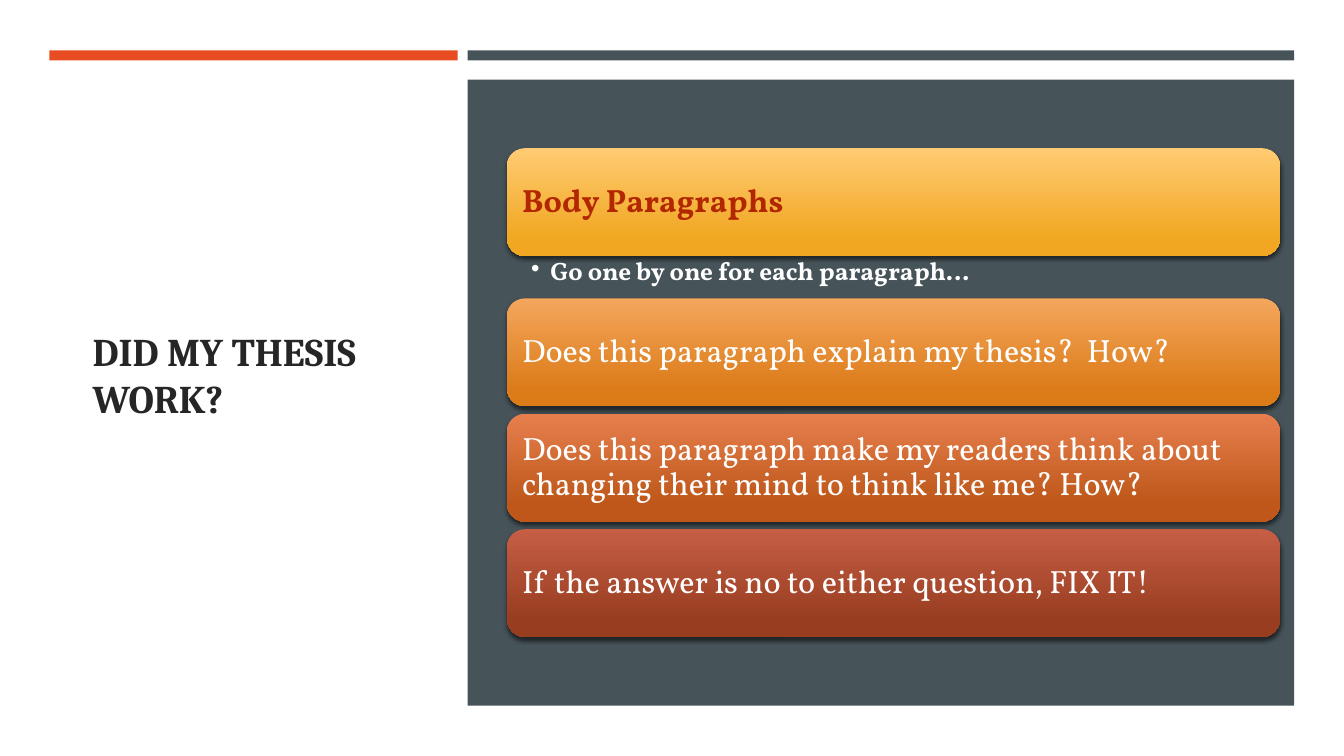
from dataclasses import dataclass
from lxml.etree import SubElement
from pptx import Presentation
from pptx.dml.color import RGBColor
from pptx.enum.shapes import MSO_SHAPE
from pptx.enum.text import MSO_ANCHOR, PP_ALIGN
from pptx.oxml.ns import qn
from pptx.util import Emu, Pt

EMU_PER_PX = 9144


@dataclass(frozen=True)
class Theme:
    white: str = "FFFFFF"
    ink: str = "262626"
    accent: str = "E84C22"
    slate: str = "465359"
    heading: str = "B22600"
    shadow: str = "000000"
    title_font: str = "Cambria"
    body_font: str = "Vollkorn"
    title_size: int = 28
    card_size: int = 23
    bullet_size: int = 18


T = Theme()

CARDS = [
    ("Body Paragraphs", "FFCB73", "F1A721"),
    ("Does this paragraph explain my thesis?  How?", "F4A65D", "DC7C19"),
    ("Does this paragraph make my readers think about changing their mind "
     "to think like me? How?", "E67F4D", "BE5719"),
    ("If the answer is no to either question, FIX IT!", "C55E44", "993D20"),
]


def px(n):
    return Emu(round(n * EMU_PER_PX))


def rgb(value):
    return RGBColor.from_string(value)


def add_text(sp, text, size, color, font=T.body_font, bold=False, spacing=0.9,
             anchor=MSO_ANCHOR.MIDDLE, insets=(10, 10, 10, 10)):
    tf = sp.text_frame
    tf.word_wrap = True
    tf.vertical_anchor = anchor
    tf.margin_left, tf.margin_top, tf.margin_right, tf.margin_bottom = map(px, insets)
    p = tf.paragraphs[0]
    p.alignment = PP_ALIGN.LEFT
    p.line_spacing = spacing
    r = p.add_run()
    r.text = text
    r.font.name = font
    r.font.size = Pt(size)
    r.font.bold = bold
    r.font.color.rgb = rgb(color)
    return p


def add_box(s, box, color=None, kind=MSO_SHAPE.RECTANGLE):
    sp = s.shapes.add_shape(kind, *map(px, box))
    sp.shadow.inherit = False
    sp.line.fill.background()
    if color:
        sp.fill.solid()
        sp.fill.fore_color.rgb = rgb(color)
    return sp


def add_shadow(sp):
    effects = sp._element.spPr.find(qn("a:effectLst"))
    shadow = SubElement(effects, qn("a:outerShdw"), blurRad=str(Pt(3)),
                        dist=str(Pt(2)), dir="5400000", rotWithShape="0")
    color = SubElement(shadow, qn("a:srgbClr"), val=T.shadow)
    SubElement(color, qn("a:alpha"), val="55000")


def add_card(s, box, text, top_color, bottom_color, color, bold):
    sp = add_box(s, box, kind=MSO_SHAPE.ROUNDED_RECTANGLE)
    sp.fill.gradient()
    sp.fill.gradient_angle = 270
    stops = zip(sp.fill.gradient_stops, (0, 0.84), (top_color, bottom_color))
    for stop, position, value in stops:
        stop.position = position
        stop.color.rgb = rgb(value)
    add_shadow(sp)
    add_text(sp, text, T.card_size, color, bold=bold)


def add_bullet(s, box, text):
    sp = s.shapes.add_textbox(*map(px, box))
    p = add_text(sp, text, T.bullet_size, T.white, bold=True,
                 anchor=MSO_ANCHOR.TOP, insets=(24, 3, 18, 3))
    p.level = 1
    pPr = p._p.get_or_add_pPr()
    pPr.set("marL", str(px(19)))
    pPr.set("indent", str(-px(19)))
    SubElement(pPr, qn("a:buChar"), char="•")


def add_title(s, box):
    x, y, w, h = box
    add_box(s, (x, y, w, 10), T.accent)
    sp = s.shapes.add_textbox(*map(px, (x + 33, y + 64, w - 71, h - 135)))
    add_text(sp, "DID MY THESIS WORK?", T.title_size, T.ink, font=T.title_font,
             bold=True, spacing=1, insets=(10, 5, 10, 5))


def add_panel(s, box):
    x, y, w, h = box
    add_box(s, (x, y, w, 10), T.slate)
    add_box(s, (x, y + 29, w, h - 29), T.slate)
    add_cards(s, (x + 39, y + 97, w - 53, 485))


def add_cards(s, box):
    x, y, w, h = box
    card_h, bullet_h = 107, 42
    gap = (h - len(CARDS) * card_h - bullet_h) / (len(CARDS) - 2)
    for i, (text, top_color, bottom_color) in enumerate(CARDS):
        first = i == 0
        add_card(s, (x, y, w, card_h), text, top_color, bottom_color,
                 T.heading if first else T.white, first)
        y += card_h
        if first:
            add_bullet(s, (x, y, w, bullet_h), "Go one by one for each paragraph…")
        y += bullet_h if first else gap


def main():
    prs = Presentation()
    prs.slide_height = px(750)
    prs.slide_width = Emu(prs.slide_height * 16 // 9)
    s = prs.slides.add_slide(prs.slide_layouts[6])
    s.background.fill.solid()
    s.background.fill.fore_color.rgb = rgb(T.white)
    add_title(s, (49, 50, 405, 650))
    add_panel(s, (464, 50, 820, 650))
    prs.save("out.pptx")


if __name__ == "__main__":
    main()
